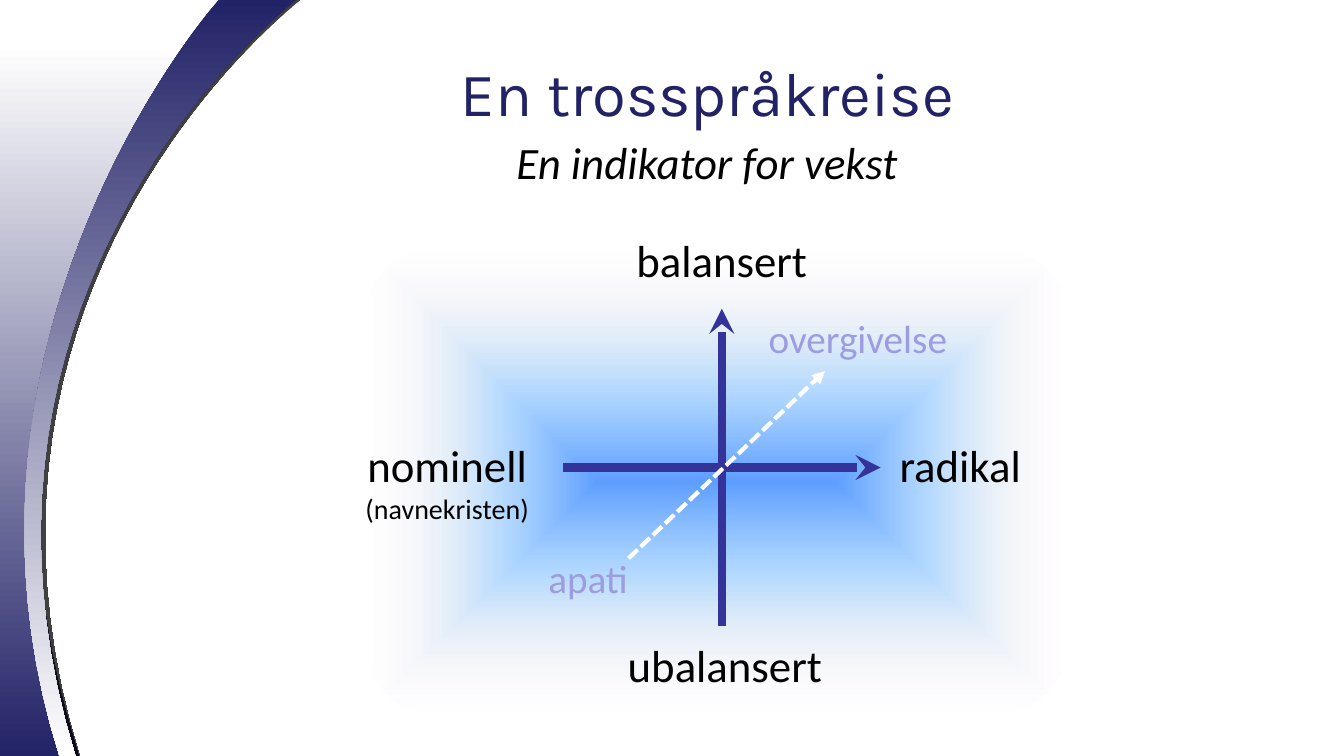
import pptx
import pptx.util
from lxml import etree
from pptx.dml.color import RGBColor
from pptx.enum.dml import MSO_LINE
from pptx.enum.shapes import MSO_CONNECTOR, MSO_SHAPE
from pptx.enum.text import MSO_ANCHOR, PP_ALIGN
from pptx.oxml import parse_xml
from pptx.oxml.ns import nsdecls, qn
from pptx.util import Cm

COLORS = {
    "navy": "222267", "axis": "333399", "lilac": "9C9CDF", "black": "000000",
    "white": "FFFFFF", "grey": "808080",
    "glow_core": "5E9EFF", "glow_inner": "85C2FF",
    "glow_outer": "C4D6EB", "glow_edge": "FFEBFA",
}
WIDTH, HEIGHT = 33.87, 19.05
CURVE_STEPS = 40
DOWNWARD = '<a:lin ang="5400000" scaled="0"/>'
FROM_CENTRE = ('<a:path path="shape"><a:fillToRect l="50000" t="50000" '
               'r="50000" b="50000"/></a:path>')


def rgb(name):
    return RGBColor.from_string(COLORS[name])


def shadow_effect(color, opacity, distance, angle):
    """Effect list with one sharp shadow; distance in points, angle in degrees."""
    return parse_xml(
        f'<a:effectLst {nsdecls("a")}><a:outerShdw blurRad="0" '
        f'dist="{pptx.util.Pt(distance)}" dir="{angle * 60000}" algn="ctr" rotWithShape="0">'
        f'<a:srgbClr val="{COLORS[color]}"><a:alpha val="{opacity * 1000}"/></a:srgbClr>'
        f'</a:outerShdw></a:effectLst>')


def fill_gradient(shape, stops, direction):
    """Fill with (position, color, opacity) stops, all in percent."""
    marks = "".join(
        f'<a:gs pos="{position * 1000}"><a:srgbClr val="{COLORS[color]}">'
        f'<a:alpha val="{opacity * 1000}"/></a:srgbClr></a:gs>'
        for position, color, opacity in stops)
    gradient = parse_xml(f'<a:gradFill {nsdecls("a")} rotWithShape="1">'
                         f'<a:gsLst>{marks}</a:gsLst>{direction}</a:gradFill>')
    shape.fill.solid()
    properties = shape._element.spPr
    properties.replace(properties.find(qn("a:solidFill")), gradient)
    shape.line.fill.background()
    shape.shadow.inherit = False


def curve(start, pull_1, pull_2, end):
    """Points after the start along a cubic curve."""
    points = []
    for step in range(1, CURVE_STEPS + 1):
        t = step / CURVE_STEPS
        weights = ((1 - t) ** 3, 3 * t * (1 - t) ** 2, 3 * t * t * (1 - t), t ** 3)
        points.append(tuple(
            sum(weight * point[axis] for weight, point in zip(weights, (start, pull_1, pull_2, end)))
            for axis in (0, 1)))
    return points


def add_outline(page, points):
    places = [(Cm(x), Cm(y)) for x, y in points]
    builder = page.shapes.build_freeform(*places[0], scale=1.0)
    builder.add_line_segments(places[1:], close=True)
    return builder.convert_to_shape()


def add_text(page, box, lines, font="Calibri", color="black", italic=False,
             wrap=False, anchor=MSO_ANCHOR.TOP):
    """Centred text; lines are (text, size) pairs, box is left, top, width, height."""
    shape = page.shapes.add_textbox(*map(Cm, box))
    frame = shape.text_frame
    frame.word_wrap = wrap
    frame.vertical_anchor = anchor
    for index, (text, size) in enumerate(lines):
        para = frame.add_paragraph() if index else frame.paragraphs[0]
        para.alignment = PP_ALIGN.CENTER
        span = para.add_run()
        span.text = text
        span.font.name = font
        span.font.size = pptx.util.Pt(size)
        span.font.italic = italic
        span.font.color.rgb = rgb(color)
    return shape


def add_arrow(page, start, end, color, weight, head, dash=None):
    arrow = page.shapes.add_connector(MSO_CONNECTOR.STRAIGHT, *map(Cm, start + end))
    arrow.line.color.rgb = rgb(color)
    arrow.line.width = pptx.util.Pt(weight)
    if dash:
        arrow.line.dash_style = dash
    etree.SubElement(arrow.line._get_or_add_ln(), qn("a:tailEnd"), type=head)
    etree.SubElement(arrow._element.spPr, qn("a:effectLst"))


def add_side_decoration(page, box):
    left, top, _, height = box
    bottom = top + height

    # Pale field along the left edge
    field_top = top + 1.12
    field_start = (left + 4.67, field_top)
    edge = curve(field_start, (left - 1.14, top + 10.06), (left + 1.5, top + 17.32),
                 (left + 1.98, bottom))
    field = add_outline(page, [(left, field_top), field_start, *edge, (left, bottom)])
    fill_gradient(field, [(0, "white", 100), (100, "navy", 100)], DOWNWARD)

    # Curved band with a dark rim
    foot_outer, foot_inner = (left + 1.5, bottom), (left + 1.9, bottom)
    tip_outer, tip_inner = (left + 5.51, top), (left + 7.47, top)
    inner = curve(foot_inner, (left - 1.8, top + 7.04), tip_inner, tip_inner)
    outer = curve(tip_outer, tip_outer, (left - 1.88, top + 8.38), foot_outer)
    band = add_outline(page, [foot_outer, foot_inner, *inner, tip_outer, *outer[:-1]])
    fill_gradient(band, [(0, "navy", 100), (100, "white", 100)], DOWNWARD)
    properties = band._element.spPr
    properties.replace(properties.find(qn("a:effectLst")), shadow_effect("black", 75, 3, 0))


def add_heading(page, box):
    left, top, width, _ = box
    title = add_text(page, (left, top, width, 3.15), [("En trosspråkreise", 44)],
                     font="Karla", color="navy", wrap=True, anchor=MSO_ANCHOR.MIDDLE)
    span = title.text_frame.paragraphs[0].runs[0]
    span.font._element.find(qn("a:solidFill")).addnext(shadow_effect("grey", 100, 2, 45))
    add_text(page, (left + 1.58, top + 2.54, width - 3.2, 1.63),
             [("En indikator for vekst", 32)], italic=True, wrap=True)


def add_growth_cross(page, box):
    left, top, _, _ = box

    # Soft glow
    glow = page.shapes.add_shape(MSO_SHAPE.ROUNDED_RECTANGLE, *map(Cm, box))
    fill_gradient(glow, [(0, "glow_core", 100), (40, "glow_inner", 60),
                         (70, "glow_outer", 30), (100, "glow_edge", 0)], FROM_CENTRE)

    # Axes and the journey arrow, measured from the crossing
    x, y, reach = left + 9.05, top + 5.56, 4
    add_arrow(page, (x - reach, y), (x + reach, y), "axis", 6, "stealth")
    add_arrow(page, (x, y + reach), (x, y - reach), "axis", 6, "stealth")
    add_arrow(page, (x - 2.35, y + 2.29), (x + 2.6, y - 2.43), "white", 3, "triangle",
              dash=MSO_LINE.SQUARE_DOT)

    # Labels: centre offset from the crossing, size, lines, color
    labels = [
        (0, -5.24, 4.83, 1.6, [("balansert", 32)], "black"),
        (-6.92, 0.35, 4.67, 2.46, [("nominell", 32), ("(navnekristen)", 20)], "black"),
        (6.01, -0.08, 3.61, 1.6, [("radikal", 32)], "black"),
        (0.08, 4.97, 5.41, 1.6, [("ubalansert", 32)], "black"),
        (-3.37, 2.79, 2.54, 1.45, [("apati", 28)], "lilac"),
        (3.43, -3.26, 5.05, 1.45, [("overgivelse", 28)], "lilac"),
    ]
    for across, down, width, height, lines, color in labels:
        place = (x + across - width / 2, y + down - height / 2, width, height)
        add_text(page, place, lines, color=color)


def main():
    deck = pptx.Presentation()
    deck.slide_width, deck.slide_height = Cm(WIDTH), Cm(HEIGHT)
    page = deck.slides.add_slide(deck.slide_layouts[6])
    add_side_decoration(page, (0, 0, 7.47, HEIGHT))
    add_growth_cross(page, (9.14, 6.22, 17.8, 11.81))
    add_heading(page, (7.72, 0.74, 20.24, 4.17))
    deck.save("out.pptx")


if __name__ == "__main__":
    main()
